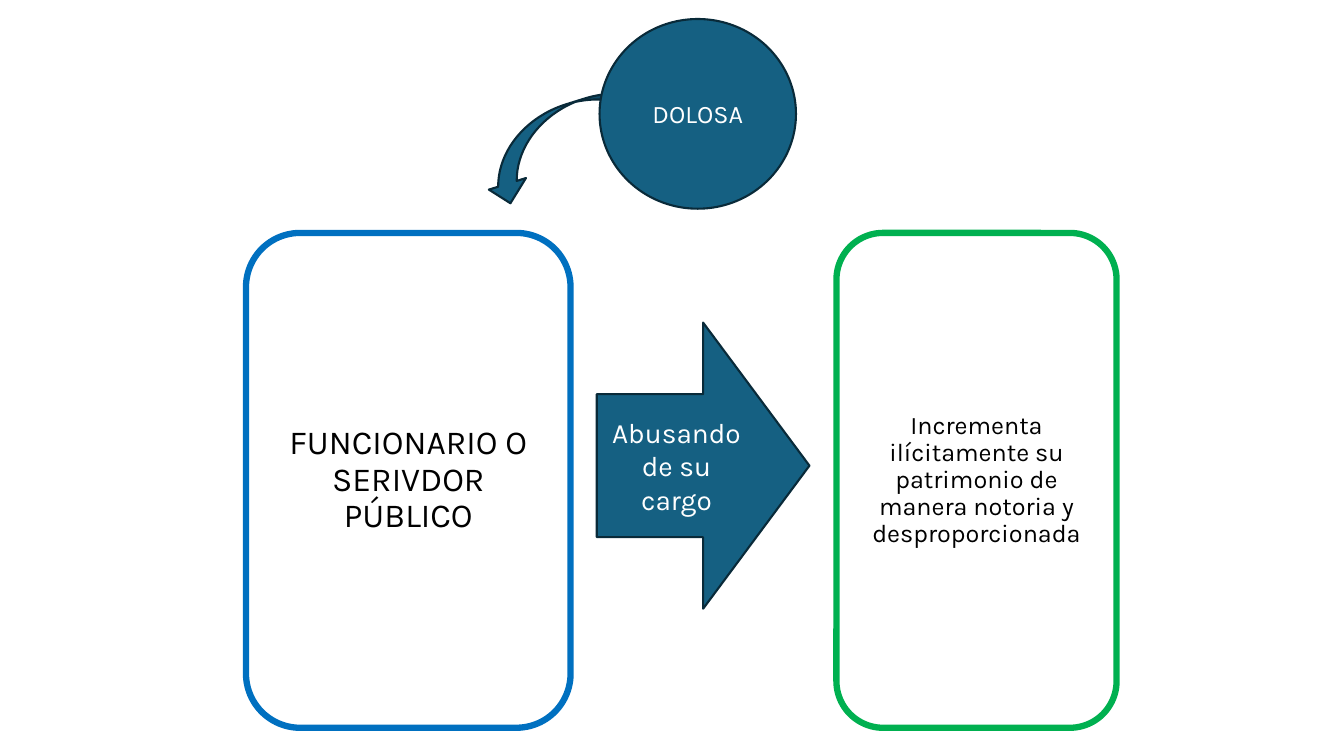
from pptx import Presentation
from pptx.dml.color import RGBColor
from pptx.enum.shapes import MSO_SHAPE
from pptx.enum.text import MSO_ANCHOR, PP_ALIGN
from pptx.util import Cm, Pt

ROUNDED = MSO_SHAPE.ROUNDED_RECTANGLE
RIGHT_ARROW = MSO_SHAPE.RIGHT_ARROW
CURVED_ARROW = MSO_SHAPE.CURVED_RIGHT_ARROW
OVAL = MSO_SHAPE.OVAL
MIDDLE = MSO_ANCHOR.MIDDLE
CENTER = PP_ALIGN.CENTER

BLUE = RGBColor(0x00, 0x70, 0xC0)
GREEN = RGBColor(0x00, 0xB0, 0x50)
TEAL = RGBColor(0x15, 0x60, 0x82)
DARK_TEAL = RGBColor(0x09, 0x2A, 0x39)
BLACK = RGBColor(0x00, 0x00, 0x00)
WHITE = RGBColor(0xFF, 0xFF, 0xFF)

BOX_TOP, BOX_HEIGHT = 5.87, 12.47


def add_figure(kind, left, top, width, height, line_color, line_width, fill=None):
    shape = slide.shapes.add_shape(kind, Cm(left), Cm(top), Cm(width), Cm(height))
    shape.shadow.inherit = False
    if fill is None:
        shape.fill.background()
    else:
        shape.fill.solid()
        shape.fill.fore_color.rgb = fill
    shape.line.color.rgb = line_color
    shape.line.width = Pt(line_width)
    return shape


def write_text(shape, text, size, color, line_spacing=1.0):
    frame = shape.text_frame
    frame.word_wrap = True
    frame.vertical_anchor = MIDDLE
    paragraph = frame.paragraphs[0]
    paragraph.alignment = CENTER
    paragraph.line_spacing = line_spacing
    run = paragraph.add_run()
    run.text = text
    for name, value in {"name": "Karla", "size": Pt(size)}.items():
        setattr(run.font, name, value)
    run.font.color.rgb = color


presentation = Presentation()
presentation.slide_width = Cm(33.87)
presentation.slide_height = Cm(19.05)
slide = presentation.slides.add_slide(presentation.slide_layouts[6])

# Who acts, and the result
boxes = [
    (6.2, 8.18, BLUE, "FUNCIONARIO O SERIVDOR PÚBLICO", 24),
    (21.08, 7.06, GREEN,
     "Incrementa ilícitamente su patrimonio de manera notoria y desproporcionada", 18),
]
for left, width, color, text, size in boxes:
    box = add_figure(ROUNDED, left, BOX_TOP, width, BOX_HEIGHT, color, 4.5)
    write_text(box, text, size, BLACK, line_spacing=0.9)

# How: the abuse of office, and the intent behind it
abuse_arrow = add_figure(RIGHT_ARROW, 15.04, 8.13, 5.36, 7.21, DARK_TEAL, 1.5, TEAL)
write_text(abuse_arrow, "Abusando de su cargo", 20, WHITE)

intent_arrow = add_figure(CURVED_ARROW, 13.69, 0.84, 1.96, 5.38, DARK_TEAL, 1.5, TEAL)
intent_arrow.rotation = 72.6

intent_circle = add_figure(OVAL, 15.11, 0.48, 4.95, 4.78, DARK_TEAL, 1.5, TEAL)
write_text(intent_circle, "DOLOSA", 18, WHITE)

presentation.save("out.pptx")
